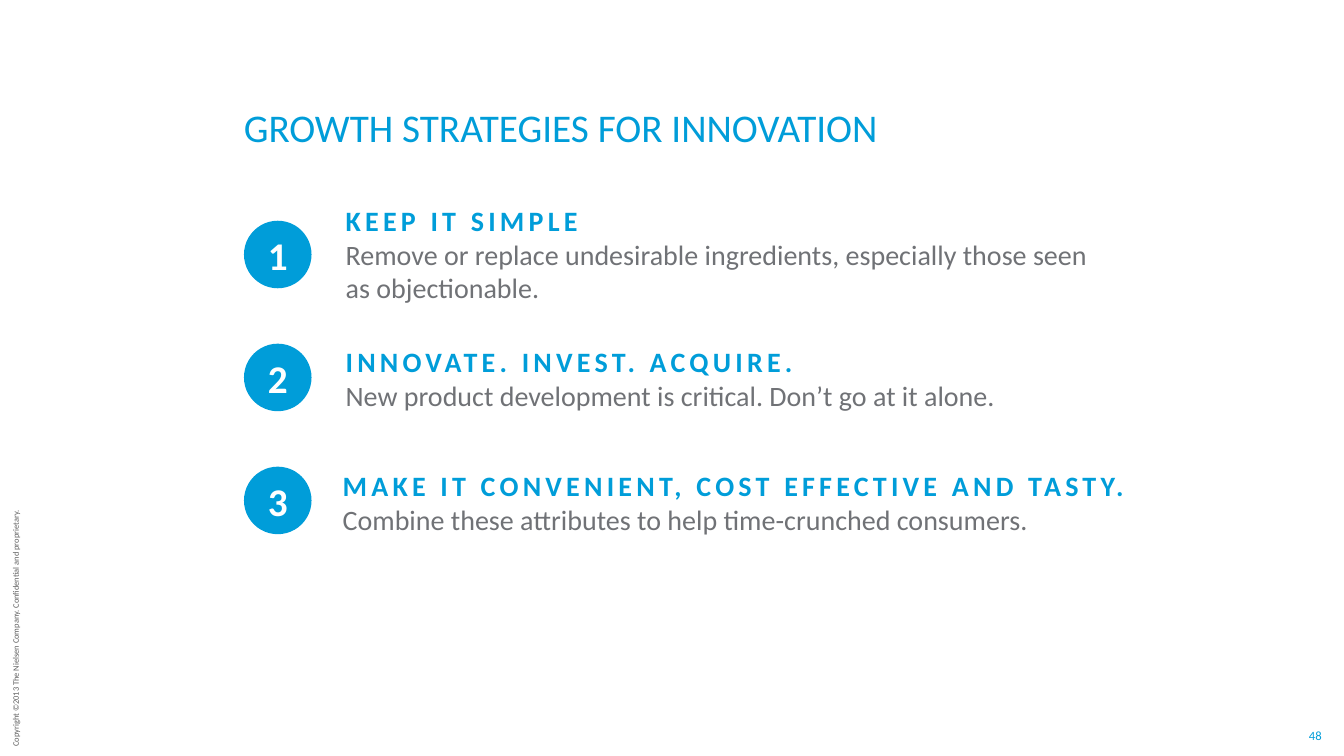
from dataclasses import dataclass

from pptx import Presentation
from pptx.dml.color import RGBColor
from pptx.enum import shapes, text
from pptx.util import Inches, Pt

COLORS = {"blue": "009DD9", "gray": "707276", "dark": "5F5F5F", "white": "FFFFFF"}
FONT = "Calibri"
CIRCLE_LEFT, CIRCLE_TOP, CIRCLE_SIZE, CIRCLE_STEP = 2.42, 2.19, 0.67, 1.22
HEADING_SPACING = 300  # hundredths of a point


@dataclass
class Box:
    left: float
    top: float
    width: float
    height: float

    def emu(self) -> list:
        return [Inches(v) for v in (self.left, self.top, self.width, self.height)]


@dataclass
class Strategy:
    heading: str
    detail: str
    box: Box


STRATEGIES = [
    Strategy("KEEP IT SIMPLE",
             "Remove or replace undesirable ingredients, especially those seen as objectionable.",
             Box(3.33, 1.97, 7.67, 1.11)),
    Strategy("INNOVATE. INVEST. ACQUIRE.",
             "New product development is critical. Don’t go at it alone.",
             Box(3.33, 3.37, 7.67, 0.77)),
    Strategy("MAKE IT CONVENIENT, COST EFFECTIVE AND TASTY.",
             "Combine these attributes to help time-crunched consumers.",
             Box(3.3, 4.6, 8.13, 0.77)),
]


def set_attrs(target, values: dict) -> None:
    for name, value in values.items():
        setattr(target, name, value)


def add_run(p, words: str, size: float, color: str, bold: bool = False):
    r = p.add_run()
    r.text = words
    set_attrs(r.font, {"name": FONT, "size": Pt(size), "bold": bold})
    r.font.color.rgb = RGBColor.from_string(COLORS[color])
    return r


def add_text_frame(slide, box: Box, **frame_format):
    sp = slide.shapes.add_textbox(*box.emu())
    set_attrs(sp.text_frame, {"word_wrap": True, **frame_format})
    return sp


def add_circle(slide, number: int) -> None:
    top = CIRCLE_TOP + (number - 1) * CIRCLE_STEP
    box = Box(CIRCLE_LEFT, top, CIRCLE_SIZE, CIRCLE_SIZE)
    sp = slide.shapes.add_shape(shapes.MSO_SHAPE.OVAL, *box.emu())
    sp.shadow.inherit = False
    sp.fill.solid()
    sp.fill.fore_color.rgb = RGBColor.from_string(COLORS["blue"])
    sp.line.fill.background()
    tf = sp.text_frame
    set_attrs(tf, {"word_wrap": False, "vertical_anchor": text.MSO_ANCHOR.MIDDLE,
                   "margin_left": 0, "margin_right": 0, "margin_top": 0, "margin_bottom": 0})
    p = tf.paragraphs[0]
    p.alignment = text.PP_ALIGN.CENTER
    add_run(p, str(number), 28, "white", bold=True)


def add_strategy(slide, strategy: Strategy) -> None:
    tf = add_text_frame(slide, strategy.box).text_frame
    r = add_run(tf.paragraphs[0], strategy.heading, 20, "blue", bold=True)
    r.font._element.set("spc", str(HEADING_SPACING))
    add_run(tf.add_paragraph(), strategy.detail, 20, "gray")


def main() -> None:
    prs = Presentation()
    set_attrs(prs, {"slide_width": Inches(13.33), "slide_height": Inches(7.5)})
    slide = prs.slides.add_slide(prs.slide_layouts[6])

    # Copyright line along the left edge
    sp = add_text_frame(slide, Box(-1.14, 6.11, 2.59, 0.2), word_wrap=False)
    sp.rotation = 270
    add_run(sp.text_frame.paragraphs[0],
            "Copyright ©2013 The Nielsen Company. Confidential and proprietary.", 6, "dark")

    # Page number
    sp = add_text_frame(slide, Box(12.97, 7.22, 0.15, 0.15), word_wrap=False,
                        vertical_anchor=text.MSO_ANCHOR.MIDDLE,
                        margin_left=0, margin_right=0, margin_top=0, margin_bottom=0)
    p = sp.text_frame.paragraphs[0]
    p.alignment = text.PP_ALIGN.CENTER
    add_run(p, "48", 9, "blue")

    # Title
    sp = add_text_frame(slide, Box(2.32, 1, 7.85, 0.49), margin_top=0, margin_bottom=0,
                        vertical_anchor=text.MSO_ANCHOR.BOTTOM)
    add_run(sp.text_frame.paragraphs[0], "GROWTH STRATEGIES FOR INNOVATION", 28, "blue")

    # Numbered strategies
    for number, strategy in enumerate(STRATEGIES, start=1):
        add_circle(slide, number)
        add_strategy(slide, strategy)

    prs.save("out.pptx")


if __name__ == "__main__":
    main()
